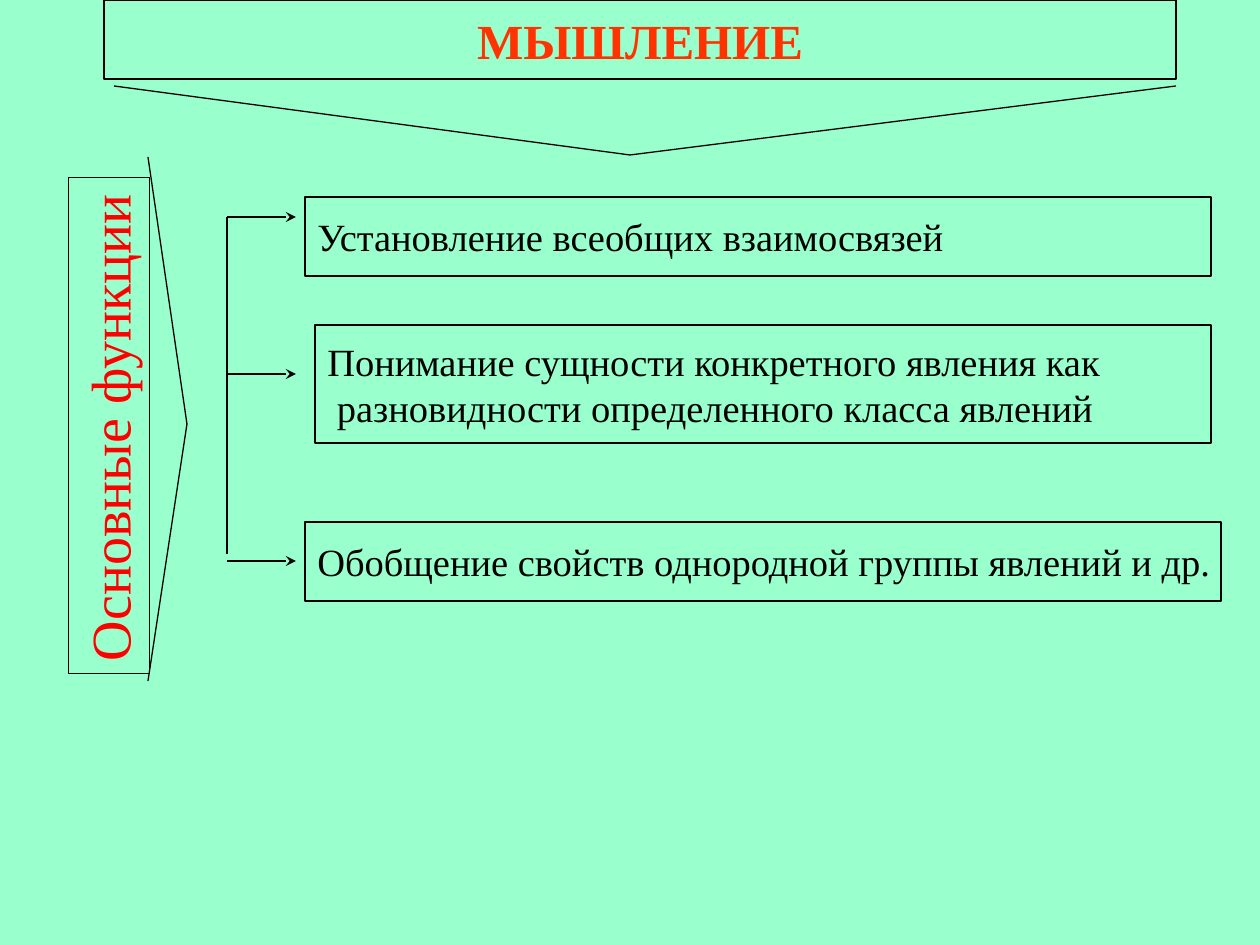
from pptx import Presentation
from pptx.dml.color import RGBColor
from pptx.enum.shapes import MSO_CONNECTOR as Link, MSO_SHAPE as Form
from pptx.enum.text import MSO_ANCHOR as Anchor, MSO_AUTO_SIZE as Fit, PP_ALIGN as Align
from pptx.oxml.ns import qn
from pptx.util import Pt
from lxml.etree import SubElement as add_sub

SCALE = 914400 / 126


def emu(px):
    return round(px * SCALE)


def color(code):
    return RGBColor.from_string(code)


class Board:
    face = "Times New Roman"
    ink = "000000"
    width = 0.75

    def __init__(self, deck, back):
        self.slide = deck.slides.add_slide(deck.slide_layouts[5])
        fill = self.slide.background.fill
        fill.solid()
        fill.fore_color.rgb = color(back)

    def stroke(self, item):
        item.line.color.rgb = color(self.ink)
        item.line.width = Pt(self.width)

    def letter(self, shape, lines, size, tint, align=Align.LEFT, bold=False,
               anchor=Anchor.MIDDLE, fit=Fit.NONE):
        frame = shape.text_frame
        frame.text = "\n".join(lines)
        frame.word_wrap = False
        frame.auto_size = fit
        frame.vertical_anchor = anchor
        for para in frame.paragraphs:
            para.alignment = align
            font = para.font
            font.name = self.face
            font.size = Pt(size)
            font.bold = bold
            font.color.rgb = color(tint)

    def title(self, text, x, y, w, h, size, tint):
        shape = self.slide.shapes.title
        shape.left, shape.top, shape.width, shape.height = map(emu, (x, y, w, h))
        self.stroke(shape)
        self.letter(shape, [text], size, tint, Align.CENTER, True)

    def box(self, lines, x, y, w, h, size=22):
        shape = self.slide.shapes.add_shape(Form.RECTANGLE, *map(emu, (x, y, w, h)))
        shape.shadow.inherit = False
        shape.fill.background()
        self.stroke(shape)
        self.letter(shape, lines, size, self.ink)

    def label(self, text, x, y, w, h, size, tint, turn):
        shape = self.slide.shapes.add_textbox(*map(emu, (x, y, w, h)))
        shape.rotation = turn
        self.stroke(shape)
        self.letter(shape, [text], size, tint, anchor=Anchor.TOP,
                    fit=Fit.SHAPE_TO_FIT_TEXT)

    def line(self, start, end, arrow=False):
        link = self.slide.shapes.add_connector(
            Link.STRAIGHT, *map(emu, (*start, *end)))
        self.stroke(link)
        props = link._element.spPr
        if arrow:
            add_sub(props.find(qn("a:ln")), qn("a:tailEnd"), type="stealth")
        add_sub(props, qn("a:effectLst"))


def main():
    deck = Presentation()
    deck.slide_width, deck.slide_height = emu(1260), emu(945)
    board = Board(deck, "99FFCC")

    board.title("МЫШЛЕНИЕ", 104, 0, 1072, 79, 28, "FF3300")
    for x in (114, 1176):
        board.line((x, 86), (630, 155))
    for y in (157, 681):
        board.line((148, y), (187, 424))

    stem = 227
    board.line((stem, 217), (stem, 554))
    for y in (561, 374, 217):
        board.line((stem, y), (296, y), arrow=True)

    board.box(["Установление всеобщих взаимосвязей"], 305, 197, 906, 79)
    board.box(["Понимание сущности конкретного явления как",
               " разновидности определенного класса явлений"], 315, 325, 896, 118)
    board.box(["Обобщение свойств однородной группы явлений и др."],
              305, 522, 916, 79)
    board.label("Основные функции", -139, 385, 496, 81, 32, "FF0000", 270)

    deck.save("out.pptx")


if __name__ == "__main__":
    main()
